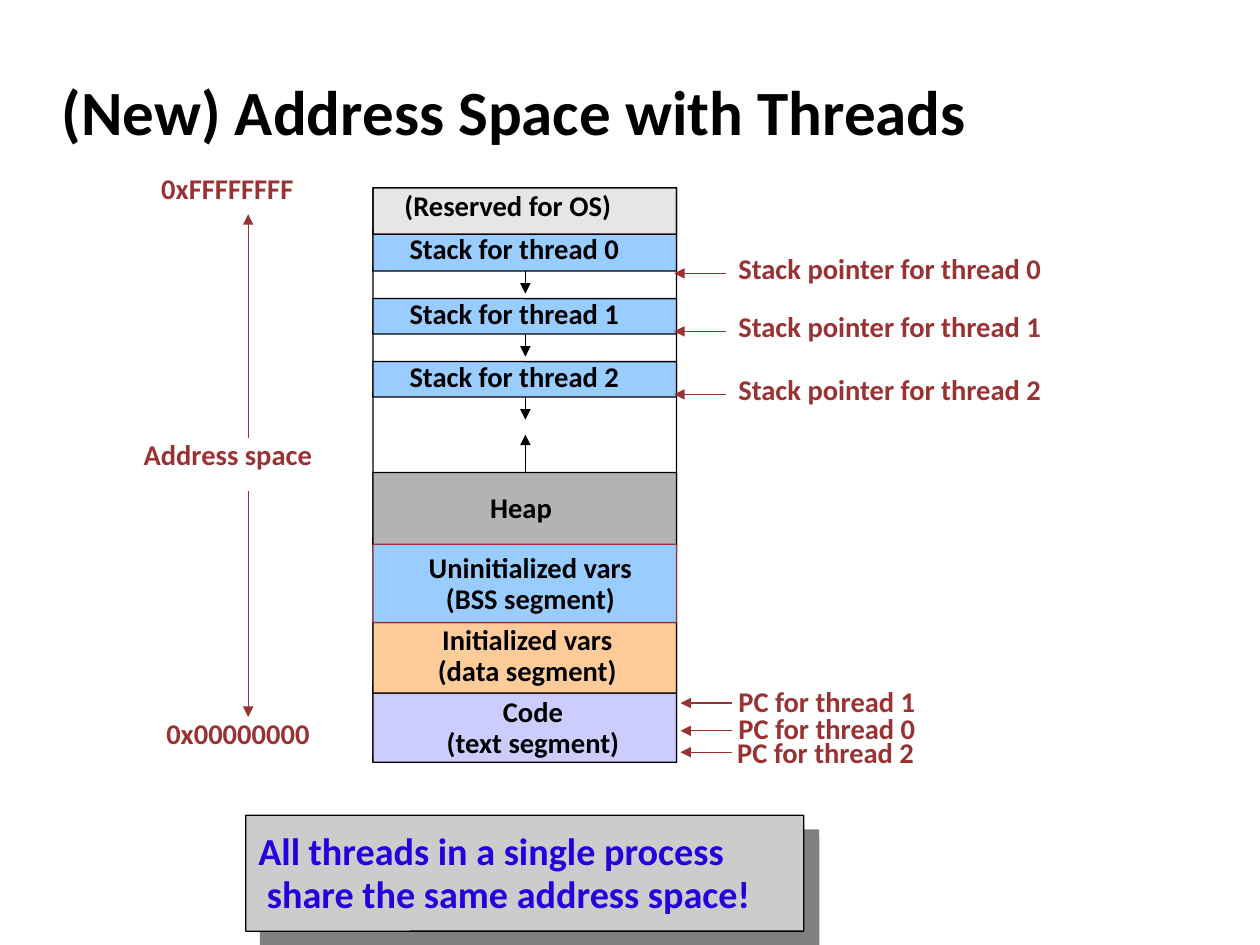
from dataclasses import dataclass

from lxml import etree
from pptx import Presentation
from pptx.dml.color import RGBColor
from pptx.enum.shapes import MSO_CONNECTOR, MSO_SHAPE
from pptx.enum.text import MSO_ANCHOR, MSO_AUTO_SIZE, PP_ALIGN
from pptx.oxml.ns import qn
from pptx.slide import Slide
from pptx.util import Pt

STRAIGHT = MSO_CONNECTOR.STRAIGHT
ROUNDED = MSO_SHAPE.ROUNDED_RECTANGLE
LEFT, CENTER = PP_ALIGN.LEFT, PP_ALIGN.CENTER
TOP, MIDDLE = MSO_ANCHOR.TOP, MSO_ANCHOR.MIDDLE
NO_AUTOFIT = MSO_AUTO_SIZE.NONE

EMU_PER_PX = 9144
BLACK, RED, BLUE, SKY = "000000", "993333", "2300DC", "99CCFF"
COLUMN_LEFT, COLUMN_WIDTH, ARROW_X = 296, 241, 417


def px(*lengths):
    return [round(length * EMU_PER_PX) for length in lengths]


def color(value):
    return RGBColor.from_string(value)


def write(frame, text, *, size=16.3, fill=BLACK, align=LEFT, anchor=TOP, wrap=False):
    frame.word_wrap = wrap
    frame.auto_size = NO_AUTOFIT
    frame.vertical_anchor = anchor
    frame.text = text
    for index, paragraph in enumerate(frame.paragraphs):
        paragraph.alignment = align
        paragraph.line_spacing = 0.9 if index else 0.93
        paragraph.space_before = Pt(0)
        for run in paragraph.runs:
            font = run.font
            font.name, font.size, font.bold = "Calibri", Pt(size), True
            font.color.rgb = color(fill)


@dataclass
class Diagram:
    """Draws styled elements on the current slide."""

    slide: Slide
    line_width: float = 0.75

    def title(self, text, left, top, width, height):
        shape = self.slide.shapes.title
        shape.left, shape.top, shape.width, shape.height = px(left, top, width, height)
        write(shape.text_frame, text, size=36, anchor=MIDDLE, wrap=True)

    def box(self, top, height, fill=None, line=BLACK, left=COLUMN_LEFT, width=COLUMN_WIDTH):
        shape = self.slide.shapes.add_shape(ROUNDED, *px(left, top, width, height))
        shape.adjustments[0] = 0.004
        shape.shadow.inherit = False
        if fill:
            shape.fill.solid()
            shape.fill.fore_color.rgb = color(fill)
        else:
            shape.fill.background()
        shape.line.color.rgb = color(line)
        shape.line.width = Pt(self.line_width)
        return shape

    def shadow_box(self, *place, **style):
        shape = self.box(*place, **style)
        effects = shape._element.spPr.find(qn("a:effectLst"))
        shadow = etree.SubElement(
            effects, qn("a:outerShdw"), blurRad="0", dist=str(Pt(12)),
            dir=str(45 * 60000), algn="tl", rotWithShape="0")
        etree.SubElement(shadow, qn("a:srgbClr"), val="808080")

    def label(self, text, left, top, width, height=26, **style):
        shape = self.slide.shapes.add_textbox(*px(left, top, width, height))
        frame = shape.text_frame
        frame.margin_left = frame.margin_right = 0
        frame.margin_top = frame.margin_bottom = 0
        write(frame, text, **style)

    def arrow(self, start_x, start_y, end_x, end_y, fill=RED):
        connector = self.slide.shapes.add_connector(
            STRAIGHT, *px(start_x, start_y, end_x, end_y))
        connector.line.color.rgb = color(fill)
        connector.line.width = Pt(self.line_width)
        etree.SubElement(connector.line._get_or_add_ln(), qn("a:tailEnd"), type="triangle")
        etree.SubElement(connector._element.spPr, qn("a:effectLst"))


def draw_memory_column(diagram):
    diagram.box(149, 37, "E6E6E6")
    diagram.label("(Reserved for OS)", 321, 152, 190)
    diagram.box(149, 456)
    for thread, (top, height) in enumerate([(186, 29), (237, 28), (287, 28)]):
        arrow_top = 210 + 50 * thread
        diagram.arrow(ARROW_X, arrow_top, ARROW_X, arrow_top + 23, BLACK)
        diagram.box(top, height, SKY)
        diagram.label(f"Stack for thread {thread}", 325, top, 192)
    diagram.arrow(ARROW_X, 376, ARROW_X, 345, BLACK)

    for top, height, fill in [(550, 55, "CCCCFF"), (494, 56, "FFCC99"), (375, 58, "B3B3B3")]:
        diagram.box(top, height, fill)
    diagram.box(432, 62, SKY, RED)
    diagram.label("Heap", 389, 391, 58)
    for text, left, top, width in [
        ("Uninitialized vars\n(BSS segment)", 325, 439, 192),
        ("Initialized vars\n(data segment)", 337, 496, 163),
        ("Code\n(text segment)", 344, 553, 158),
    ]:
        diagram.label(text, left, top, width, 53, align=CENTER, wrap=True)


def draw_address_range(diagram):
    for text, left, top, width in [
        ("0xFFFFFFFF", 128, 138, 144),
        ("Address space", 114, 349, 161),
        ("0x00000000", 132, 571, 136),
    ]:
        diagram.label(text, left, top, width, 30, fill=RED)
    diagram.arrow(197, 348, 197, 170)
    diagram.arrow(197, 390, 197, 569)


def draw_pointers(diagram):
    for thread, top in enumerate([202, 248, 298]):
        diagram.label(f"Stack pointer for thread {thread}", 586, top, 275, fill=RED)
        diagram.arrow(576, top + 15, 535, top + 15)
    for thread, left, top, arrow_y in [(1, 586, 545, 558), (0, 586, 567, 580), (2, 585, 586, 597)]:
        diagram.label(f"PC for thread {thread}", left, top, 185, fill=RED)
        diagram.arrow(581, arrow_y, 540, arrow_y)


def main():
    presentation = Presentation()
    presentation.slide_width, presentation.slide_height = px(1000, 750)
    title_only = presentation.slide_layouts[5]
    diagram = Diagram(presentation.slides.add_slide(title_only))
    diagram.title("(New) Address Space with Threads", 39, 49, 830, 83)
    draw_memory_column(diagram)
    draw_address_range(diagram)
    draw_pointers(diagram)
    diagram.shadow_box(647, 92, "CCCCCC", left=195, width=443)
    diagram.label("All threads in a single process\v share the same address space!",
                  205, 660, 595, 70, size=21.8, fill=BLUE)
    presentation.save("out.pptx")


if __name__ == "__main__":
    main()
